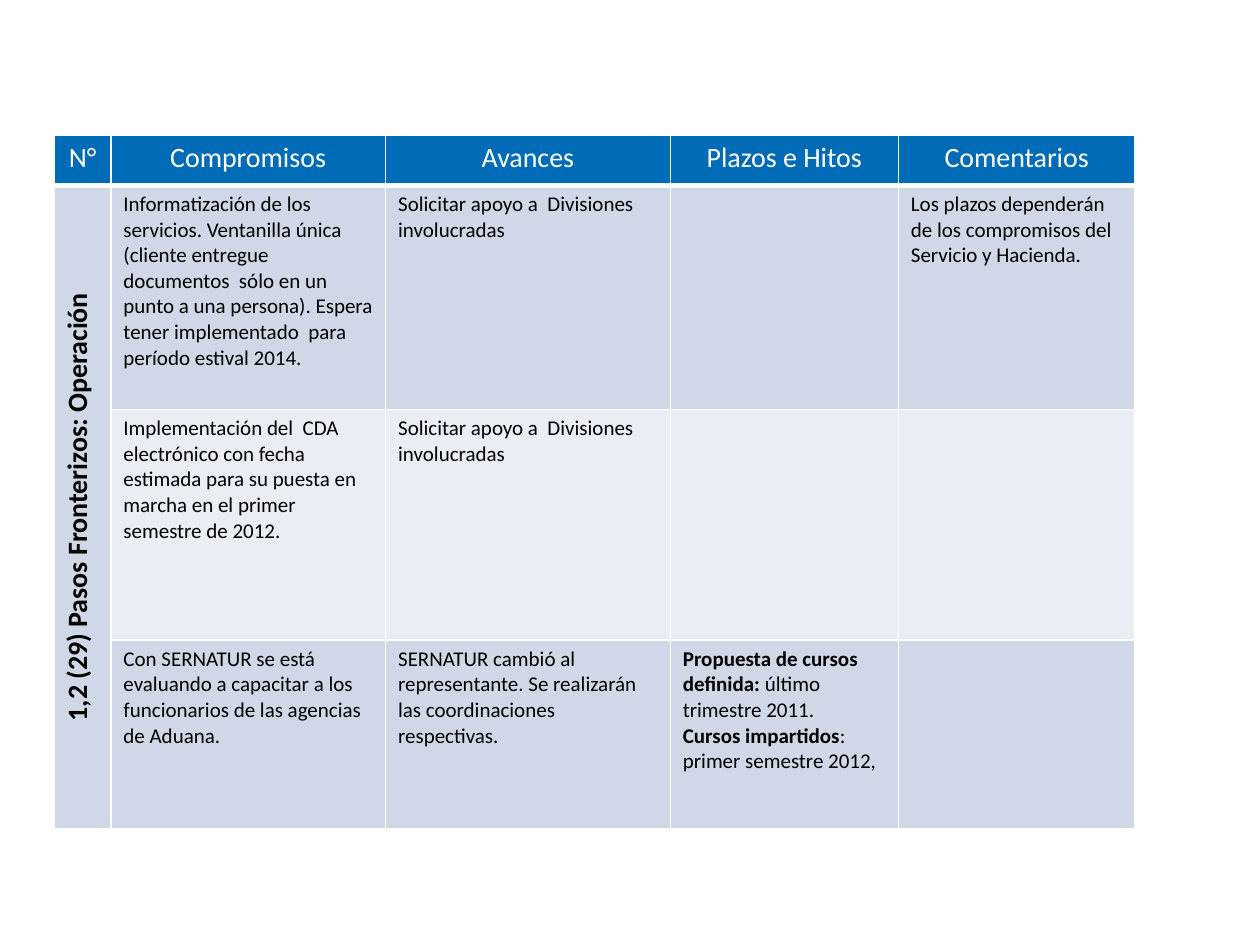
from lxml import etree
from pptx import Presentation
from pptx import util as u
from pptx.dml.color import RGBColor
from pptx.enum import text
from pptx.oxml.ns import qn

COLUMNS = [0.45, 2.18, 2.26, 1.81, 1.88]
ROWS = [0.4, 1.78, 1.83, 1.5]
HEADINGS = ["N°", "Compromisos", "Avances", "Plazos e Hitos", "Comentarios"]
TOPIC = "1,2 (29) Pasos Fronterizos: Operación"
SUPPORT = "Solicitar apoyo a  Divisiones involucradas"

# Each paragraph of the milestones is a list of (wording, bold) spans
MILESTONES = [
    [("Propuesta de cursos definida: ", True), ("último trimestre 2011.", False)],
    [("Cursos impartidos", True), (": primer semestre 2012,", False)],
]
COMMITMENTS = [
    ["Informatización de los servicios. Ventanilla única (cliente entregue "
     "documentos  sólo en un punto a una persona). Espera tener implementado  "
     "para período estival 2014.",
     SUPPORT, "",
     "Los plazos dependerán de los compromisos del Servicio y Hacienda."],
    ["Implementación del  CDA electrónico con fecha estimada para su puesta en "
     "marcha en el primer semestre de 2012.",
     SUPPORT, "", ""],
    ["Con SERNATUR se está evaluando a capacitar a los funcionarios de las "
     "agencias de Aduana.",
     "SERNATUR cambió al representante. Se realizarán las coordinaciones "
     "respectivas.",
     MILESTONES, ""],
]


def color(value):
    return RGBColor.from_string(value)


class CommitmentSlide:
    font = "Calibri"
    line = "FFFFFF"
    header_fill = "006CB7"
    bands = ["D0D8E8", "E9EDF4"]
    heading = {"size": u.Pt(16), "bold": False, "color": "FFFFFF"}
    topic = {"size": u.Pt(16), "bold": True, "color": "000000"}
    body = {"size": u.Pt(12), "bold": False, "color": "000000"}

    def __init__(self, deck):
        self.page = deck.slides.add_slide(deck.slide_layouts[6])

    def table(self, left, top, columns, rows):
        frame = self.page.shapes.add_table(
            len(rows), len(columns), u.Inches(left), u.Inches(top),
            u.Inches(sum(columns)), u.Inches(sum(rows)))
        grid = frame.table
        for column, width in zip(grid.columns, columns):
            column.width = u.Inches(width)
        for row, height in zip(grid.rows, rows):
            row.height = u.Inches(height)
        return grid

    def borders(self, cell, bottom):
        properties = cell._tc.get_or_add_tcPr()
        widths = {"a:lnL": 1, "a:lnR": 1, "a:lnT": 1, "a:lnB": bottom}
        for position, (tag, width) in enumerate(widths.items()):
            edge = etree.Element(qn(tag), w=str(u.Pt(width)))
            fill = etree.SubElement(edge, qn("a:solidFill"))
            etree.SubElement(fill, qn("a:srgbClr"), val=self.line)
            properties.insert(position, edge)

    def span(self, para, wording, style):
        span = para.add_run()
        span.text = wording
        for name, value in {"name": self.font, **style}.items():
            if name == "color":
                span.font.color.rgb = color(value)
            else:
                setattr(span.font, name, value)

    def cell(self, cell, content, fill, style, align=None, bottom=1):
        cell.fill.solid()
        cell.fill.fore_color.rgb = color(fill)
        self.borders(cell, bottom)
        if not content:
            return
        if isinstance(content, str):
            content = [[(content, style["bold"])]]
        frame = cell.text_frame
        for number, spans in enumerate(content):
            para = frame.add_paragraph() if number else frame.paragraphs[0]
            para.alignment = align
            for wording, bold in spans:
                self.span(para, wording, {**style, "bold": bold})


def main():
    deck = Presentation()
    deck.slide_width, deck.slide_height = u.Inches(10), u.Inches(7.5)
    slide = CommitmentSlide(deck)
    grid = slide.table(0.43, 1.07, COLUMNS, ROWS)
    center = text.PP_ALIGN.CENTER

    # Header row
    for column, heading in enumerate(HEADINGS):
        slide.cell(grid.cell(0, column), heading, slide.header_fill,
                   slide.heading, center, bottom=3)

    # Topic, turned upwards along all commitments
    topic = grid.cell(1, 0)
    topic.merge(grid.cell(len(COMMITMENTS), 0))
    slide.cell(topic, TOPIC, slide.bands[0], slide.topic, center)
    topic._tc.get_or_add_tcPr().set("vert", "vert270")

    # Commitments in alternating bands
    for row, contents in enumerate(COMMITMENTS, 1):
        band = slide.bands[(row - 1) % 2]
        for column, content in enumerate(contents, 1):
            slide.cell(grid.cell(row, column), content, band, slide.body)

    deck.save("out.pptx")


if __name__ == "__main__":
    main()
